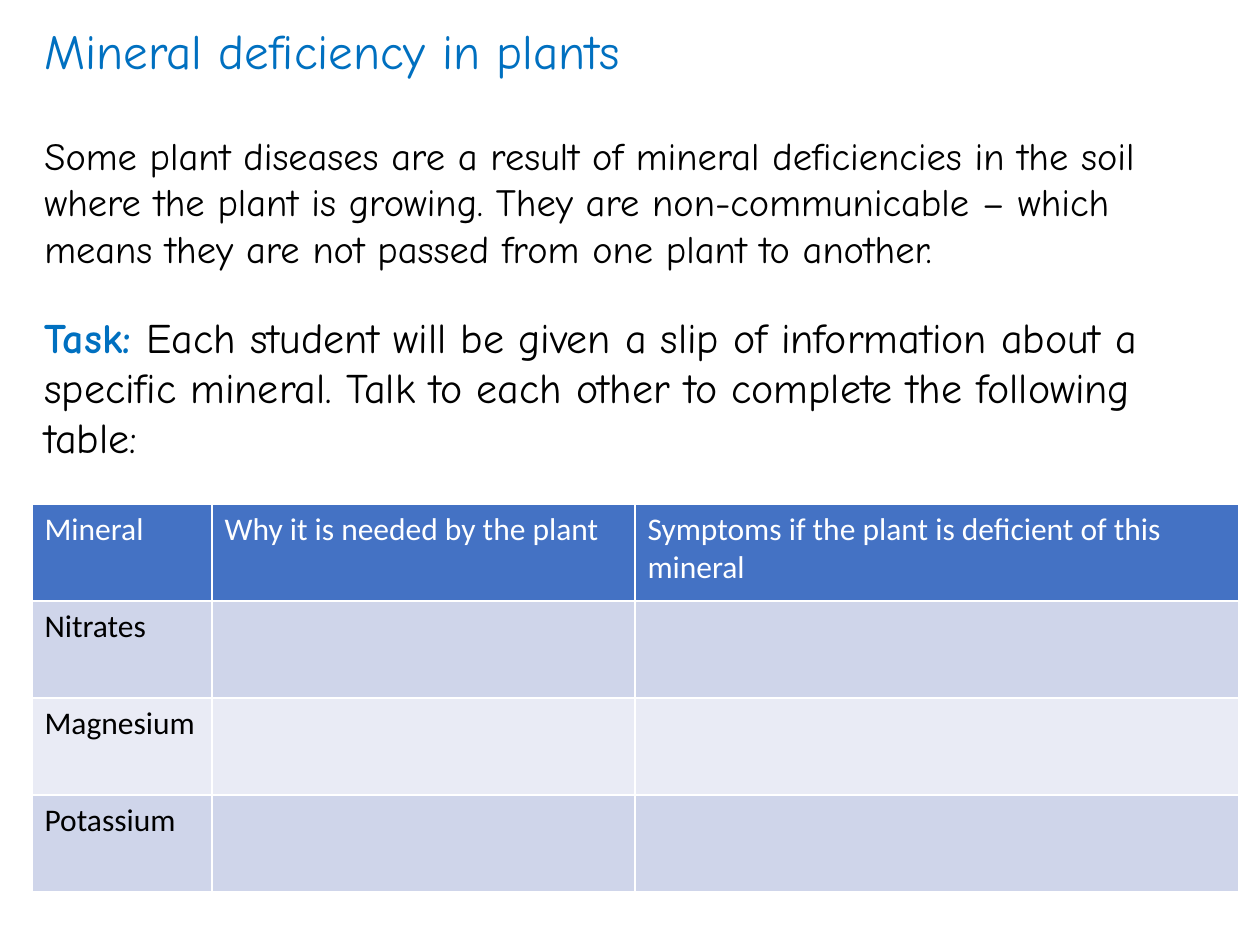
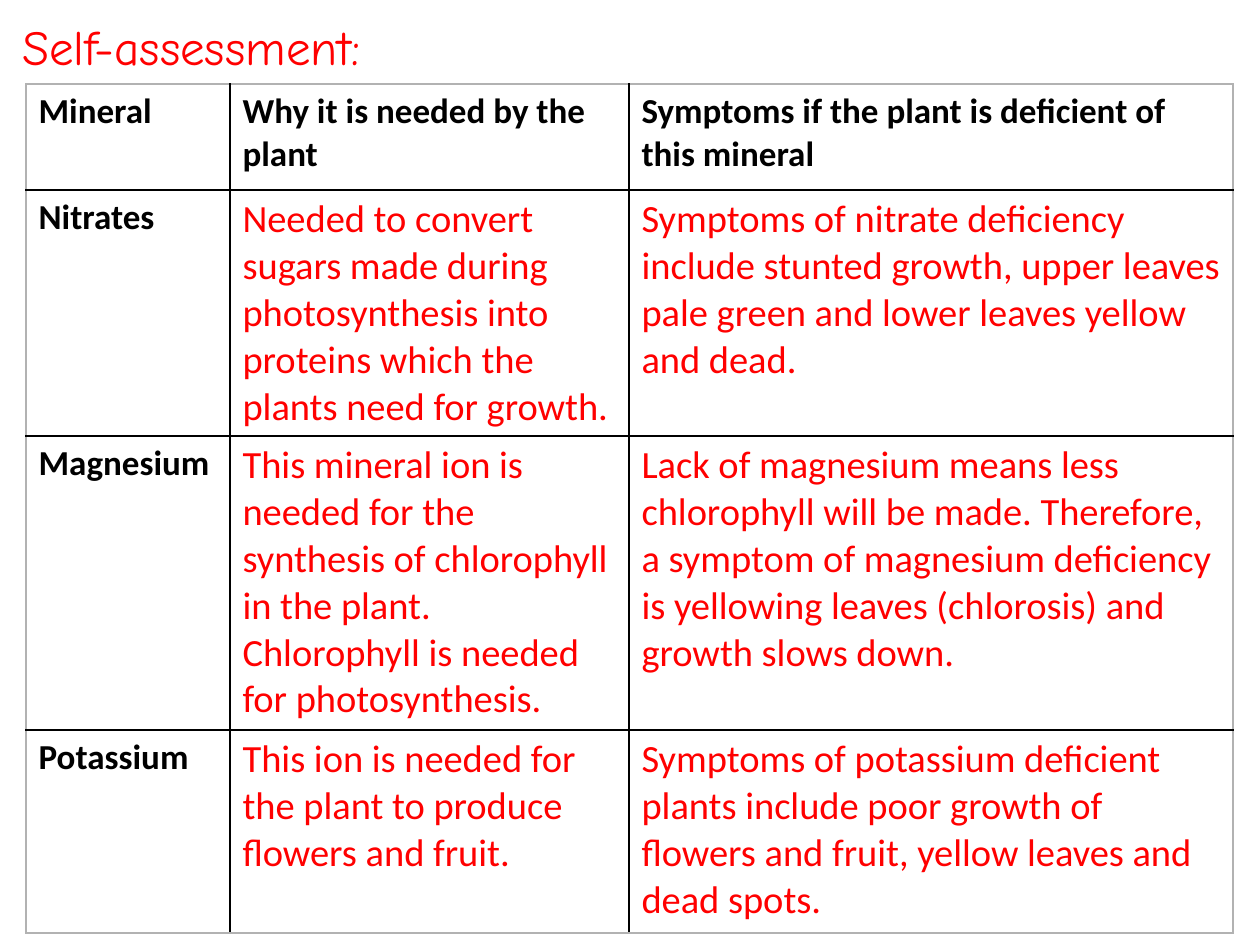
import pptx
import pptx.dml.color
import pptx.enum.text
import pptx.oxml
import pptx.oxml.ns
import pptx.util

PX = 914400 // 126
PAGE_SIZE = (1260, 945)
HAND_FONT, TABLE_FONT = "Comic Neue", "Calibri"
BLUE, RED, BLACK, WHITE = "0070C0", "FF0000", "000000", "FFFFFF"
HEADER_FILL, ODD_FILL, EVEN_FILL = "4472C4", "CFD5EA", "E9EBF5"
FRAME_GREY = "B2B2B2"
TITLE_SIZE = 28

HEADINGS = ["Mineral", "Why it is needed by the plant",
            "Symptoms if the plant is deficient of this mineral"]
ANSWERS = {
    "Nitrates": [
        "Needed to convert sugars made during photosynthesis into proteins "
        "which the plants need for growth.",
        "Symptoms of nitrate deficiency include stunted growth, upper leaves "
        "pale green and lower leaves yellow and dead."],
    "Magnesium": [
        "This mineral ion is needed for the synthesis of chlorophyll in the "
        "plant. Chlorophyll is needed for photosynthesis.",
        "Lack of magnesium means less chlorophyll will be made. Therefore, a "
        "symptom of magnesium deficiency is yellowing leaves (chlorosis) and "
        "growth slows down."],
    "Potassium": [
        "This ion is needed for the plant to produce flowers and fruit.",
        "Symptoms of potassium deficient plants include poor growth of "
        "flowers and fruit, yellow leaves and dead spots."],
}


def color(hex_string):
    return pptx.dml.color.RGBColor.from_string(hex_string)


def emu(box):
    return [length * PX for length in box]


def write(para, text, size=18, font=TABLE_FONT, fill=BLACK, bold=False):
    span = para.add_run()
    span.text = text
    span.font.size = pptx.util.Pt(size)
    span.font.name = font
    span.font.bold = bold
    span.font.color.rgb = color(fill)


def add_text(page, box, spans, line_spacing=None):
    """Place one paragraph; spans holds (text, format) pairs."""
    frame = page.shapes.add_textbox(*emu(box)).text_frame
    frame.word_wrap = True
    para = frame.paragraphs[0]
    para.line_spacing = line_spacing
    for text, style in spans:
        write(para, text, font=HAND_FONT, **style)


def add_title(page, box, text, fill, line_spacing=None):
    add_text(page, box, [(text, dict(size=TITLE_SIZE, fill=fill))], line_spacing)


def set_borders(cell, colors):
    """Draw 1 pt edges in the order left, right, top, bottom."""
    properties = cell._tc.get_or_add_tcPr()
    for place, (side, hex_string) in enumerate(zip("LRTB", colors)):
        properties.insert(place, pptx.oxml.parse_xml(
            f'<a:ln{side} {pptx.oxml.ns.nsdecls("a")} w="12700"><a:solidFill>'
            f'<a:srgbClr val="{hex_string}"/></a:solidFill></a:ln{side}>'))


def add_grid(page, corner, widths, heights, rows, cell_style, inner, outer):
    """cell_style(row, column) gives the cell fill and the text format."""
    box = (*corner, sum(widths), sum(heights))
    table = page.shapes.add_table(len(rows), len(widths), *emu(box)).table
    table.horz_banding = False
    for column, width in zip(table.columns, widths):
        column.width = width * PX
    for row, height in zip(table.rows, heights):
        row.height = height * PX
    last_row, last_column = len(rows) - 1, len(widths) - 1
    for r, texts in enumerate(rows):
        for c, text in enumerate(texts):
            cell = table.cell(r, c)
            fill, style = cell_style(r, c)
            if fill:
                cell.fill.solid()
                cell.fill.fore_color.rgb = color(fill)
            else:
                cell.fill.background()
            on_edge = (c == 0, c == last_column, r == 0, r == last_row)
            set_borders(cell, [outer if edge else inner for edge in on_edge])
            if text:
                write(cell.text_frame.paragraphs[0], text, **style)


def task_cell(row, column):
    if row == 0:
        return HEADER_FILL, dict(fill=WHITE)
    return (ODD_FILL if row % 2 else EVEN_FILL), {}


def answer_cell(row, column):
    if row == 0 or column == 0:
        return None, dict(size=20, bold=True)
    return None, dict(size=22, fill=RED)


def build_task(page, left=32):
    # Title and introduction
    add_title(page, (left, 21, 1134, 84), "Mineral deficiency in plants", BLUE, 0.9)
    add_text(page, (left, 126, 1197, 152), [(
        "Some plant diseases are a result of mineral deficiencies in the soil "
        "where the plant is growing. They are non-communicable – which means "
        "they are not passed from one plant to another.", dict(size=22))])
    # Task
    add_text(page, (left, 305, 1197, 165), [
        ("Task: ", dict(size=24, fill=BLUE, bold=True)),
        ("Each student will be given a slip of information about a specific "
         "mineral. Talk to each other to complete the following table:",
         dict(size=24))])
    # Table to complete
    rows = [HEADINGS] + [[mineral, "", ""] for mineral in ANSWERS]
    add_grid(page, (left, 504), (180, 423, 604), [97] * len(rows), rows,
             task_cell, WHITE, WHITE)


def build_answers(page):
    # Completed table
    rows = [HEADINGS] + [[mineral, *texts] for mineral, texts in ANSWERS.items()]
    add_grid(page, (26, 84), (204, 399, 604), (106, 246, 294, 203), rows,
             answer_cell, BLACK, FRAME_GREY)
    # Title
    add_title(page, (10, 10, 494, 72), "Self-assessment:", RED)


def main():
    deck = pptx.Presentation()
    deck.slide_width, deck.slide_height = emu(PAGE_SIZE)
    for build in (build_task, build_answers):
        build(deck.slides.add_slide(deck.slide_layouts[6]))
    deck.save("out.pptx")


if __name__ == "__main__":
    main()
